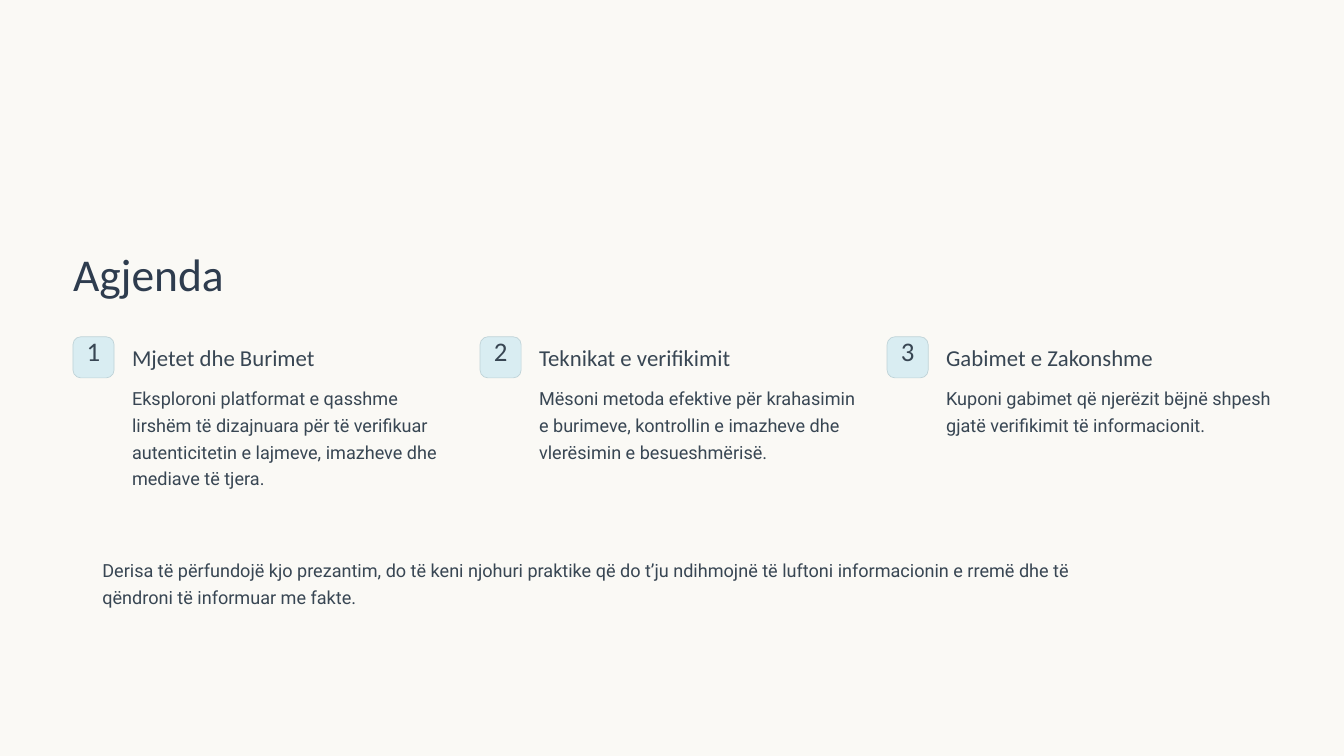
from dataclasses import dataclass

from pptx import Presentation
from pptx.dml.color import RGBColor
from pptx.enum.shapes import MSO_SHAPE
from pptx.enum.text import MSO_ANCHOR, MSO_AUTO_SIZE, PP_ALIGN
from pptx.shapes.autoshape import Shape
from pptx.slide import Slide
from pptx.util import Pt

ROUND = MSO_SHAPE.ROUNDED_RECTANGLE
TOP = MSO_ANCHOR.TOP
FIXED = MSO_AUTO_SIZE.NONE
LEFT, CENTER = PP_ALIGN.LEFT, PP_ALIGN.CENTER


@dataclass(frozen=True)
class Style:
    font: str
    size: float
    lead: float
    color: RGBColor


@dataclass(frozen=True)
class Theme:
    ink = RGBColor.from_string("384653")
    paper = RGBColor.from_string("FAF9F5")
    fill = RGBColor.from_string("D9EDF2")
    edge = RGBColor.from_string("BFD3D8")
    title = Style("Calibri", 39, 48.5, RGBColor.from_string("2E3C4E"))
    badge = Style("Calibri", 23, 23, ink)
    head = Style("Calibri", 19.5, 24, ink)
    body = Style("Roboto", 15.5, 23, ink)


@dataclass(frozen=True)
class Box:
    left: float
    top: float
    width: float
    height: float

    def emu(self) -> tuple[Pt, Pt, Pt, Pt]:
        return Pt(self.left), Pt(self.top), Pt(self.width), Pt(self.height)


@dataclass(frozen=True)
class Topic:
    head: str
    body: str


THEME = Theme()
START, PITCH = 62.6, 348.9
BADGE = 35.2
INDENT = 50.6

TOPICS = [
    Topic(
        "Mjetet dhe Burimet",
        "Eksploroni platformat e qasshme lirshëm të dizajnuara për të verifikuar "
        "autenticitetin e lajmeve, imazheve dhe mediave të tjera.",
    ),
    Topic(
        "Teknikat e verifikimit",
        "Mësoni metoda efektive për krahasimin e burimeve, kontrollin e imazheve "
        "dhe vlerësimin e besueshmërisë.",
    ),
    Topic(
        "Gabimet e Zakonshme",
        "Kuponi gabimet që njerëzit bëjnë shpesh gjatë verifikimit të informacionit.",
    ),
]
CLOSING = (
    "Derisa të përfundojë kjo prezantim, do të keni njohuri praktike që do t’ju "
    "ndihmojnë të luftoni informacionin e rremë dhe të\n"
    "qëndroni të informuar me fakte."
)


def write(shape: Shape, text: str, style: Style, align: PP_ALIGN = LEFT) -> None:
    frame = shape.text_frame
    frame.text = text
    frame.word_wrap = True
    frame.auto_size = FIXED
    frame.vertical_anchor = TOP
    frame.margin_left = frame.margin_right = Pt(0)
    frame.margin_top = frame.margin_bottom = Pt(0)
    for para in frame.paragraphs:
        para.alignment = align
        para.line_spacing = Pt(style.lead)
        for run in para.runs:
            run.font.name = style.font
            run.font.size = Pt(style.size)
            run.font.color.rgb = style.color


def add_text(slide: Slide, box: Box, text: str, style: Style) -> None:
    write(slide.shapes.add_textbox(*box.emu()), text, style)


def add_badge(slide: Slide, left: float, text: str) -> None:
    box = Box(left, 288.7, BADGE, BADGE)
    shape = slide.shapes.add_shape(ROUND, *box.emu())
    shape.adjustments[0] = 0.19
    shape.shadow.inherit = False
    shape.fill.solid()
    shape.fill.fore_color.rgb = THEME.fill
    shape.line.color.rgb = THEME.edge
    shape.line.width = Pt(0.6)
    write(shape, text, THEME.badge, CENTER)
    shape.text_frame.margin_top = Pt(1)


def add_topic(slide: Slide, index: int, topic: Topic) -> None:
    left = START + index * PITCH
    add_badge(slide, left, str(index + 1))
    add_text(slide, Box(left + INDENT, 294.5, 278.6, 24.5), topic.head, THEME.head)
    add_text(slide, Box(left + INDENT, 327.6, 278.6, 70.6), topic.body, THEME.body)


def main() -> None:
    deck = Presentation()
    deck.slide_width, deck.slide_height = Pt(1152), Pt(648)
    slide = deck.slides.add_slide(deck.slide_layouts[5])
    slide.background.fill.solid()
    slide.background.fill.fore_color.rgb = THEME.paper
    title = slide.shapes.title
    title.left, title.top, title.width, title.height = Box(START, 208.8, 391, 49).emu()
    write(title, "Agjenda", THEME.title)
    for index, topic in enumerate(TOPICS):
        add_topic(slide, index, topic)
    add_text(slide, Box(87.8, 475.2, 1026.7, 46), CLOSING, THEME.body)
    deck.save("out.pptx")


if __name__ == "__main__":
    main()
